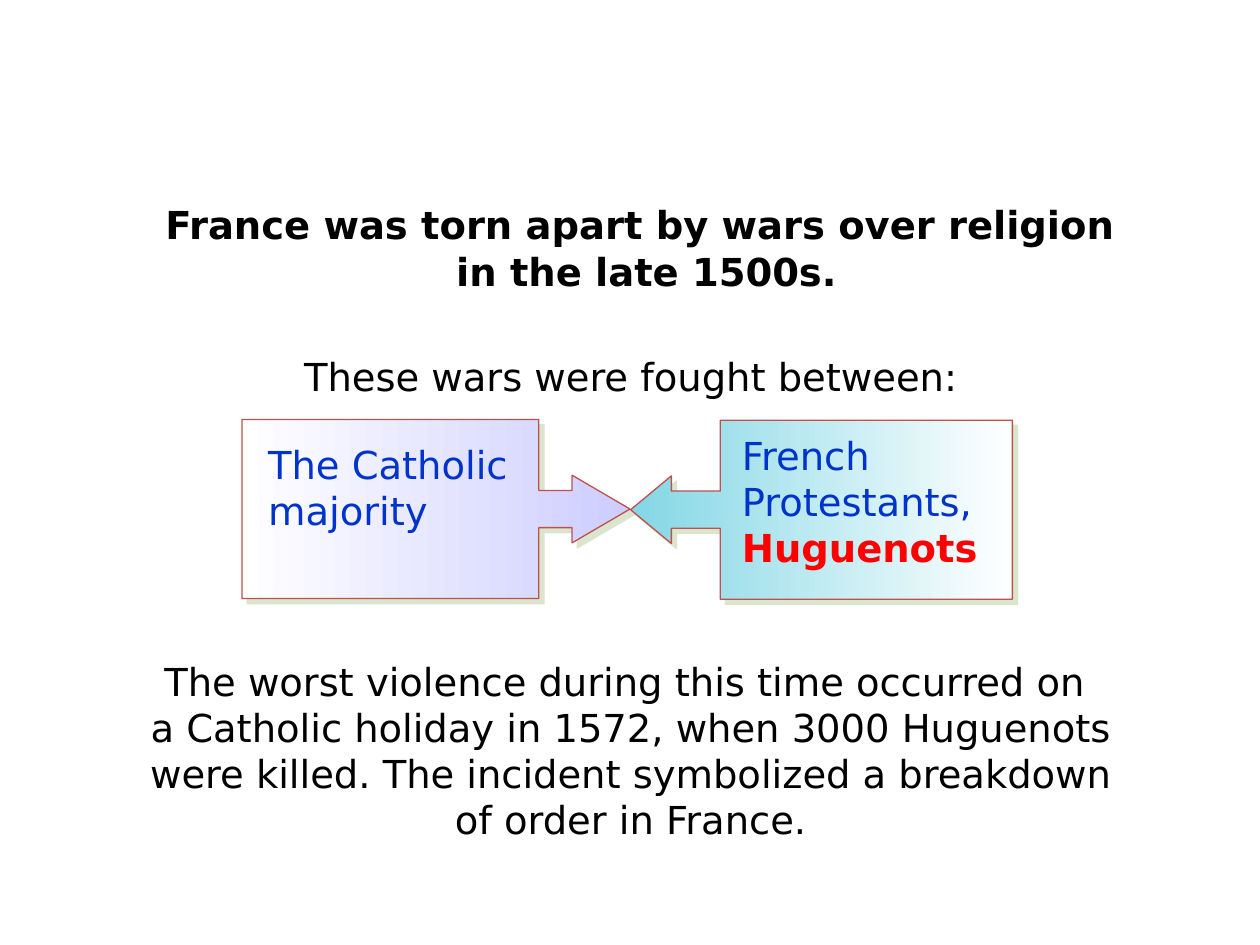
from dataclasses import dataclass

import lxml.etree
import pptx
import pptx.dml.color
import pptx.enum.shapes
import pptx.enum.text
import pptx.oxml.ns
import pptx.shapes.shapetree
import pptx.util
from pptx.util import Inches

RGBColor = pptx.dml.color.RGBColor
BLACK = RGBColor(0x00, 0x00, 0x00)
BLUE = RGBColor(0x00, 0x33, 0xCC)
RED = RGBColor(0xFF, 0x00, 0x00)
WHITE = RGBColor(0xFF, 0xFF, 0xFF)
LAVENDER = RGBColor(0xCD, 0xCD, 0xFF)
AQUA = RGBColor(0x83, 0xD7, 0xE5)
OUTLINE = RGBColor(0xC0, 0x50, 0x4D)
SHADOW = RGBColor(0xAD, 0xC7, 0x93)

LEFT = pptx.enum.text.PP_ALIGN.LEFT
CENTER = pptx.enum.text.PP_ALIGN.CENTER
FONT = {"name": "DejaVu Sans", "size": pptx.util.Pt(22)}


@dataclass
class Callout:
    """An arrow callout; the box is the one before rotation."""
    box: tuple[float, float, float, float]
    rotation: int
    head_length: float
    tip_color: RGBColor


@dataclass
class Words:
    text: str  # a line feed marks a line break
    color: RGBColor = BLACK
    bold: bool = False


@dataclass
class Passage:
    box: tuple[float, float, float, float]
    words: list[Words]
    align: pptx.enum.text.PP_ALIGN = CENTER


CATHOLIC_CALLOUT = Callout((2.75, 2.5, 1.42, 3.08), 90, 0.324, LAVENDER)
HUGUENOT_CALLOUT = Callout((5.81, 2.53, 1.42, 3.03), 270, 0.228, AQUA)
HUGUENOT_LABEL = Passage(
    (5.79, 3.38, 2.18, 1.21),
    [Words("French Protestants, ", BLUE), Words("Huguenots", RED, True)], LEFT)
PASSAGES = [
    Passage((0.92, 1.55, 8.42, 0.84), [Words(
        "France was torn apart by wars over religion \nin the late 1500s.",
        bold=True)]),
    Passage((0.92, 2.75, 8.17, 0.47),
            [Words("These wars were fought between:")]),
    Passage((0.92, 5.17, 8.17, 1.59), [Words(
        "The worst violence during this time occurred on \n"
        "a Catholic holiday in 1572, when 3000 Huguenots were killed. "
        "The incident symbolized a breakdown of order in France.")]),
    Passage((2.03, 3.45, 2.25, 0.84),
            [Words("The Catholic \nmajority", BLUE)], LEFT),
]

Shapes = pptx.shapes.shapetree._BaseGroupShapes


def add_callout(shapes: Shapes, callout: Callout) -> None:
    arrow = shapes.add_shape(
        pptx.enum.shapes.MSO_SHAPE.UP_ARROW_CALLOUT,
        *map(Inches, callout.box))
    arrow.rotation = callout.rotation
    for index, value in enumerate((0.208, 0.189, callout.head_length, 0.765)):
        arrow.adjustments[index] = value

    # Colour fades from the arrow tip to the base
    arrow.fill.gradient()
    arrow.fill.gradient_angle = 270
    for stop, color in zip(arrow.fill.gradient_stops,
                           (callout.tip_color, WHITE)):
        stop.color.rgb = color
    arrow.line.color.rgb = OUTLINE
    arrow.line.width = pptx.util.Pt(0.75)

    # Hard shadow to the lower right
    arrow.shadow.inherit = False
    effects = arrow.element.spPr.find(pptx.oxml.ns.qn("a:effectLst"))
    shadow = lxml.etree.SubElement(
        effects, pptx.oxml.ns.qn("a:outerShdw"), blurRad="0",
        dist=str(pptx.util.Pt(4.2)), dir="2700000", algn="ctr",
        rotWithShape="0")
    color = lxml.etree.SubElement(
        shadow, pptx.oxml.ns.qn("a:srgbClr"), val=str(SHADOW))
    lxml.etree.SubElement(color, pptx.oxml.ns.qn("a:alpha"), val="46000")


def add_passage(shapes: Shapes, passage: Passage) -> None:
    frame = shapes.add_textbox(*map(Inches, passage.box)).text_frame
    frame.word_wrap = True
    frame.auto_size = pptx.enum.text.MSO_AUTO_SIZE.SHAPE_TO_FIT_TEXT
    paragraph = frame.paragraphs[0]
    paragraph.alignment = passage.align
    for words in passage.words:
        for number, line in enumerate(words.text.split("\n")):
            if number:
                paragraph.add_line_break()
            run = paragraph.add_run()
            run.text = line
            for attribute, value in (FONT | {"bold": words.bold}).items():
                setattr(run.font, attribute, value)
            run.font.color.rgb = words.color


def main() -> None:
    presentation = pptx.Presentation()
    presentation.slide_width = Inches(10)
    presentation.slide_height = Inches(7.5)
    slide = presentation.slides.add_slide(presentation.slide_layouts[6])

    # The two opposing sides
    add_callout(slide.shapes, CATHOLIC_CALLOUT)
    huguenots = slide.shapes.add_group_shape().shapes
    add_callout(huguenots, HUGUENOT_CALLOUT)
    add_passage(huguenots, HUGUENOT_LABEL)

    # Headline, lead-in, outcome and the Catholic label
    for passage in PASSAGES:
        add_passage(slide.shapes, passage)

    presentation.save("out.pptx")


if __name__ == "__main__":
    main()
